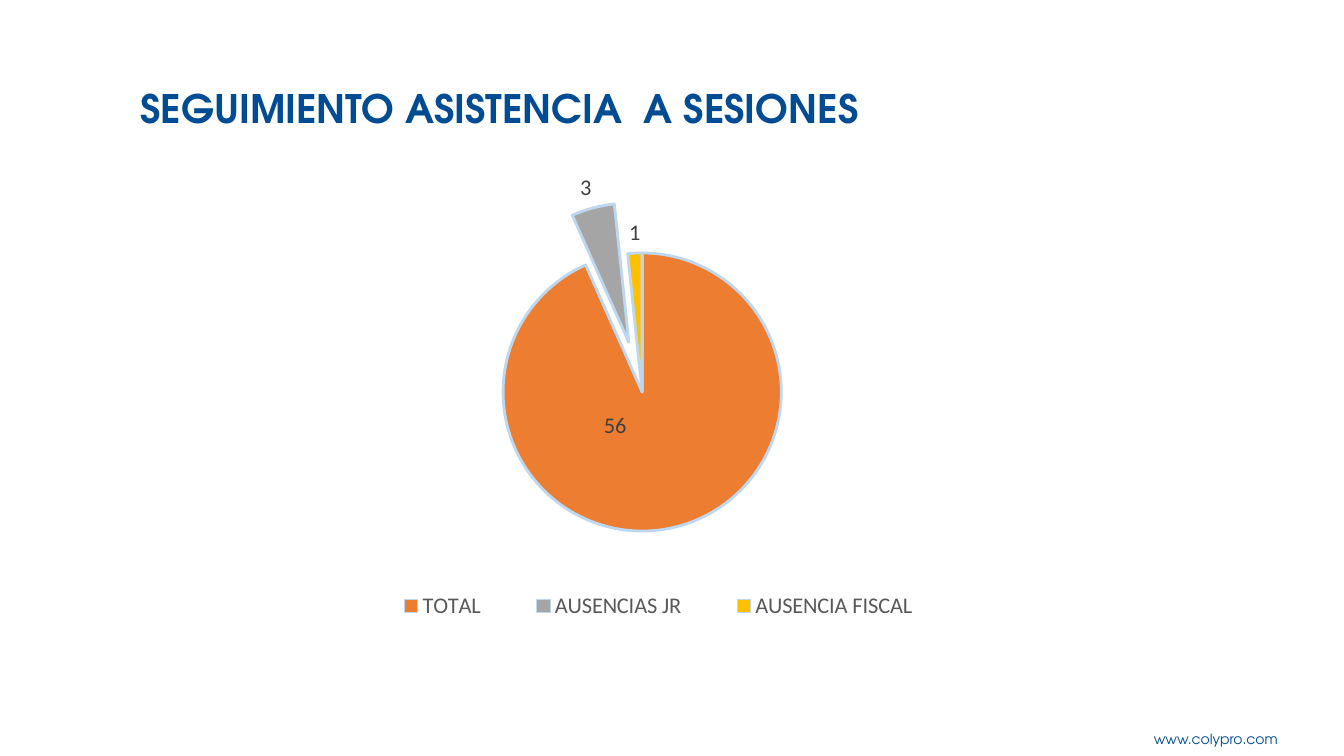
"""Build the session attendance slide with its exploded pie chart."""
from lxml import etree
from pptx import Presentation
from pptx.chart.data import CategoryChartData
from pptx.dml.color import RGBColor
from pptx.enum.chart import XL_CHART_TYPE, XL_LABEL_POSITION, XL_LEGEND_POSITION
from pptx.enum.text import MSO_ANCHOR, PP_ALIGN
from pptx.oxml import parse_xml
from pptx.oxml.ns import nsdecls, qn
from pptx.util import Inches, Pt

PIE = XL_CHART_TYPE.PIE
BOTTOM = XL_LEGEND_POSITION.BOTTOM
CENTER_LABEL = XL_LABEL_POSITION.CENTER
OUTSIDE_END = XL_LABEL_POSITION.OUTSIDE_END
MIDDLE = MSO_ANCHOR.MIDDLE
CENTER, RIGHT = PP_ALIGN.CENTER, PP_ALIGN.RIGHT

NAVY = RGBColor(0x00, 0x4C, 0x94)
PALE_BLUE = RGBColor(0xBD, 0xD7, 0xEE)
LABEL_GRAY = RGBColor(0x40, 0x40, 0x40)
LEGEND_GRAY = RGBColor(0x59, 0x59, 0x59)
BLACK = RGBColor(0x00, 0x00, 0x00)
SLICE_COLORS = [
    RGBColor(0x5B, 0x9B, 0xD5),
    RGBColor(0xED, 0x7D, 0x31),
    RGBColor(0xA5, 0xA5, 0xA5),
    RGBColor(0xFF, 0xC0, 0x00),
]
TITLE_FONT, CHART_FONT = "TeX Gyre Adventor", "Calibri"
CHART_WIDTH, CHART_HEIGHT = 10.31, 4.84
PIE_BOX = (3.78, 0.94, 2.76, 2.76)
LEGEND_BOX = (2.32, 4.24, 6, 0.4)

presentation = Presentation()
presentation.slide_width = Inches(13.33)
presentation.slide_height = Inches(7.5)
slide = presentation.slides.add_slide(presentation.slide_layouts[6])


def add_text(text, box, size, align, bold=False, line_spacing=1.0):
    shape = slide.shapes.add_textbox(*(Inches(length) for length in box))
    frame = shape.text_frame
    frame.word_wrap = True
    frame.vertical_anchor = MIDDLE
    paragraph = frame.paragraphs[0]
    paragraph.alignment = align
    paragraph.line_spacing = line_spacing
    run = paragraph.add_run()
    run.text = text
    run.font.name, run.font.size, run.font.bold = TITLE_FONT, Pt(size), bold
    run.font.color.rgb = NAVY


def manual_layout(box, target=""):
    left, top, width, height = box
    return parse_xml(
        f'<c:layout {nsdecls("c")}><c:manualLayout>{target}'
        '<c:xMode val="edge"/><c:yMode val="edge"/>'
        f'<c:x val="{left / CHART_WIDTH}"/><c:y val="{top / CHART_HEIGHT}"/>'
        f'<c:w val="{width / CHART_WIDTH}"/><c:h val="{height / CHART_HEIGHT}"/>'
        '</c:manualLayout></c:layout>')


add_text("www.colypro.com", (10.49, 7.2, 2.28, 0.27), size=10, align=RIGHT)
add_text("SEGUIMIENTO ASISTENCIA  A SESIONES", (0.56, 0.8, 8.79, 0.59),
         size=28, align=CENTER, bold=True, line_spacing=0.9)

chart_data = CategoryChartData()
chart_data.categories = ["SESIONES", "TOTAL", "AUSENCIAS JR", "AUSENCIA FISCAL"]
chart_data.add_series("Series 1", (None, 56, 3, 1))
chart = slide.shapes.add_chart(
    PIE, Inches(1.21), Inches(1.57), Inches(CHART_WIDTH), Inches(CHART_HEIGHT),
    chart_data).chart
chart.has_title = False
chart.has_legend = True
legend = chart.legend
legend.position = BOTTOM
legend.include_in_layout = False

plot = chart.plots[0]
plot.vary_by_categories = True
series = plot.series[0]
labels = series.data_labels
labels.show_value = True
labels.position = OUTSIDE_END
total_label = series.points[1].data_label

for font, size, color in [
    (chart.font, 10, BLACK),
    (legend.font, 16, LEGEND_GRAY),
    (labels.font, 16, LABEL_GRAY),
    (total_label.font, 16, LABEL_GRAY),
]:
    font.name, font.size, font.bold = CHART_FONT, Pt(size), False
    font.color.rgb = color
total_label.position = CENTER_LABEL

for index, color in enumerate(SLICE_COLORS):
    point = series.points[index]
    point.format.fill.solid()
    point.format.fill.fore_color.rgb = color
    point.format.line.color.rgb = PALE_BLUE
    point.format.line.width = Pt(2)

absences = series._element.findall(qn("c:dPt"))[2]
explosion = etree.Element(qn("c:explosion"), val="37")
absences.find(qn("c:spPr")).addprevious(explosion)

label_layout = parse_xml(
    f'<c:layout {nsdecls("c")}><c:manualLayout>'
    '<c:x val="-0.04"/><c:y val="-0.07"/></c:manualLayout></c:layout>')
series._element.find(".//" + qn("c:dLbl")).find(qn("c:idx")).addnext(label_layout)

hidden_entry = parse_xml(
    f'<c:legendEntry {nsdecls("c")}><c:idx val="0"/><c:delete val="1"/></c:legendEntry>')
for old_layout in legend._element.findall(qn("c:layout")):
    legend._element.remove(old_layout)
legend._element.find(qn("c:legendPos")).addnext(hidden_entry)
hidden_entry.addnext(manual_layout(LEGEND_BOX))

plot_area = chart._chartSpace.find(".//" + qn("c:plotArea"))
for old_layout in plot_area.findall(qn("c:layout")):
    plot_area.remove(old_layout)
plot_area.insert(0, manual_layout(PIE_BOX, '<c:layoutTarget val="inner"/>'))

presentation.save("out.pptx")
